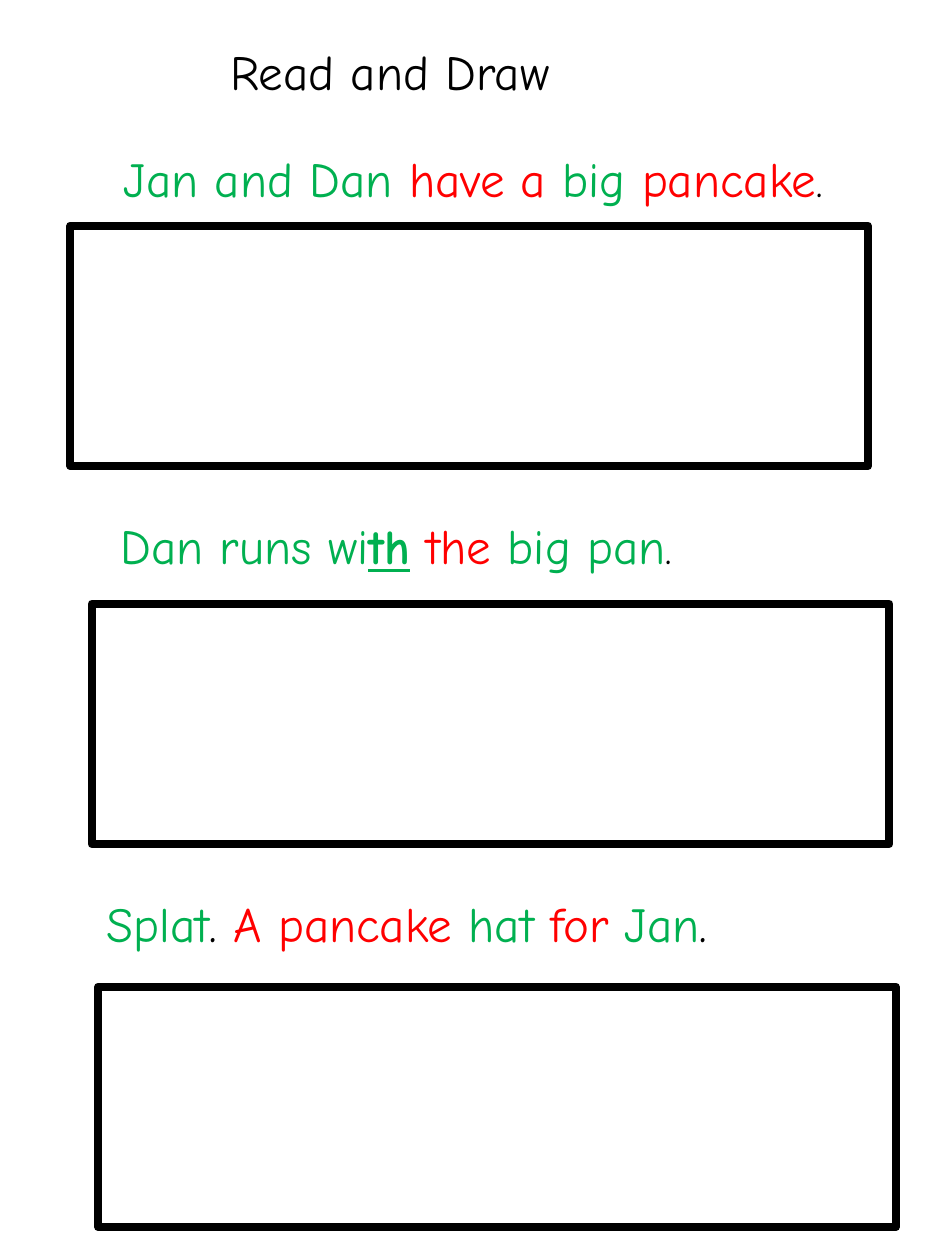
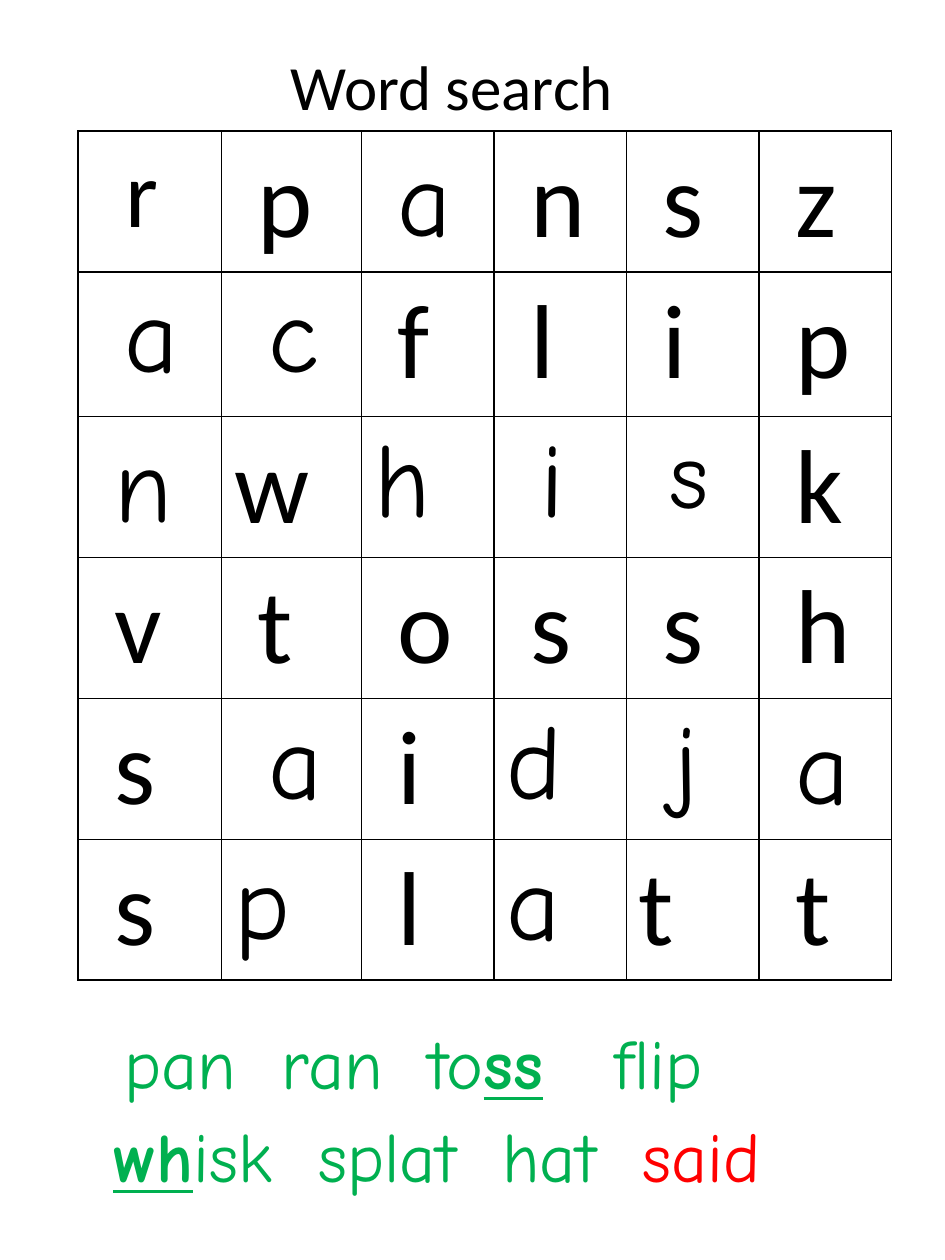
"""Builds a two-page phonics worksheet: read and draw, then a word search."""
from lxml import etree
from pptx import Presentation
from pptx.dml.color import RGBColor
from pptx.enum.shapes import MSO_SHAPE
from pptx.enum.text import MSO_ANCHOR, MSO_AUTO_SIZE, PP_ALIGN
from pptx.oxml.ns import qn
from pptx.util import Cm, Pt

RECT = MSO_SHAPE.RECTANGLE
TOP = MSO_ANCHOR.TOP
NO_FIT = MSO_AUTO_SIZE.NONE
LEFT = PP_ALIGN.LEFT

THEME = {
    "black": RGBColor(0, 0, 0),
    "white": RGBColor(255, 255, 255),
    "green": RGBColor(0, 176, 80),
    "red": RGBColor(255, 0, 0),
    "hand": "Comic Neue",
    "plain": "Calibri",
    "sentence": Pt(28),
    "dot": Pt(24),
    "search_title": Pt(36),
    "words": Pt(40),
    "letter": Pt(60),
    "small_letter": Pt(54),
    "frame": Pt(4.5),
}


def add_title(s, text, box, font, size):
    """Place and format the slide title."""
    sp = s.shapes.title
    sp.left, sp.top, sp.width, sp.height = [Cm(v) for v in box]
    tf = sp.text_frame
    tf.text = text
    tf.word_wrap = False
    tf.auto_size = NO_FIT
    tf.vertical_anchor = TOP
    p = tf.paragraphs[0]
    p.alignment = LEFT
    p.font.name, p.font.size = font, size
    p.font.color.rgb = THEME["black"]


def add_runs(p, runs, size):
    """Fill a paragraph with runs coloured by how each word is read."""
    p.font.name, p.font.size = THEME["hand"], size
    for text, style in runs:
        r = p.add_run()
        r.text = text
        r.font.color.rgb = THEME["green" if style == "sound" else "black" if style == "dot" else style]
        if style == "sound":
            r.font.bold = r.font.underline = True
        if style == "dot":
            r.font.size = THEME["dot"]


prs = Presentation()
prs.slide_width, prs.slide_height = Cm(19.05), Cm(25.4)
layout = prs.slide_layouts[5]

s = prs.slides.add_slide(layout)
add_title(s, "Read and Draw", (4.39, 0.71, 7.39, 1.45), THEME["hand"], THEME["sentence"])

tasks = [
    ((0.97, 2.87), 1.28, (1.42, 4.55),
     [("Jan and Dan ", "green"), ("have a ", "red"), ("big ", "green"),
      ("pancake", "red"), (".", "dot")]),
    ((1.22, 10.26), 0.96, (1.85, 12.17),
     [("Dan runs wi", "green"), ("th", "sound"), (" ", "green"), ("the ", "red"),
      ("big pan", "green"), (".", "dot")]),
    ((1.35, 17.88), 0.55, (1.98, 19.89),
     [("Splat", "green"), (". ", "black"), ("A pancake ", "red"), ("hat ", "green"),
      ("for ", "red"), ("Jan", "green"), (".", "black")]),
]
for (text_x, text_y), indent, (frame_x, frame_y), runs in tasks:
    sp = s.shapes.add_shape(RECT, Cm(frame_x), Cm(frame_y), Cm(16.08), Cm(4.85))
    sp.shadow.inherit = False
    sp.fill.solid()
    sp.fill.fore_color.rgb = THEME["white"]
    sp.line.color.rgb = THEME["black"]
    sp.line.width = THEME["frame"]
    tf = s.shapes.add_textbox(Cm(text_x), Cm(text_y), Cm(17.35), Cm(1.45)).text_frame
    tf.word_wrap = True
    tf.margin_left = Cm(0.25 + indent)
    add_runs(tf.paragraphs[0], runs, THEME["sentence"])

s = prs.slides.add_slide(layout)
add_title(s, "Word search", (5.61, 0.84, 7.06, 1.8), THEME["plain"], THEME["search_title"])

letters = ["rpansz", "acflip", "nwhisk", "tossh", "saidja", "splatt"]
letters[3] = "v" + letters[3]
looks = ["LBmBBB", "NNBBBB", "mbnNSB", "BBBBBB", "BNBnNm", "BnBnbB"]
LOOKS = {
    "B": ("plain", "letter", 0.48, 0),
    "b": ("plain", "letter", 0, 0),
    "L": ("plain", "small_letter", 0.7, 0),
    "N": ("hand", "letter", 0.69, 0),
    "n": ("hand", "letter", 0, 0),
    "m": ("hand", "letter", 0.48, 0.1),
    "S": ("hand", "small_letter", 0.62, 0),
}
table = s.shapes.add_table(6, 6, Cm(1.57), Cm(2.64), Cm(16.41), Cm(17.09)).table
table.first_row = table.horz_banding = False
for i in range(6):
    table.columns[i].width = Cm({0: 2.9, 1: 2.82}.get(i, 2.67))
    table.rows[i].height = Cm(2.92 if i == 1 else 2.84)
    for j in range(6):
        font, size, indent, drop = LOOKS[looks[i][j]]
        cell = table.cell(i, j)
        cell.text = letters[i][j]
        cell.margin_left = Cm(0.25 + indent)
        cell.margin_top = Cm(0.13 + drop)
        p = cell.text_frame.paragraphs[0]
        p.font.name, p.font.size = THEME[font], THEME[size]
        p.font.color.rgb = THEME["black"]
        tcPr = cell._tc.get_or_add_tcPr()
        for side in ("a:lnL", "a:lnR", "a:lnT", "a:lnB"):
            ln = etree.SubElement(tcPr, qn(side), w=str(Pt(1)))
            fill = etree.SubElement(ln, qn("a:solidFill"))
            etree.SubElement(fill, qn("a:srgbClr"), val=str(THEME["black"]))
        cell.fill.background()

tf = s.shapes.add_textbox(Cm(1.57), Cm(19.74), Cm(16.87), Cm(4.52)).text_frame
tf.word_wrap = True
tf.margin_top = Cm(0.82)
word_lines = [
    ((0.69, 3.86, 6.82, 10.57),
     [("\tpan\tran\tto", "green"), ("ss", "sound"), ("\tflip", "green")]),
    ((0.46, 4.6, 8.31, 11.13),
     [("\t", "green"), ("wh", "sound"), ("isk\tsplat\that\t", "green"), ("said", "red")]),
]
for n, (stops, runs) in enumerate(word_lines):
    p = tf.add_paragraph() if n else tf.paragraphs[0]
    p.space_before = Pt(5 * n)
    add_runs(p, runs, THEME["words"])
    pPr = p._p.get_or_add_pPr()
    tabs = etree.Element(qn("a:tabLst"))
    for stop in stops:
        etree.SubElement(tabs, qn("a:tab"), pos=str(Cm(stop)), algn="l")
    pPr.find(qn("a:defRPr")).addprevious(tabs)

prs.save("out.pptx")
